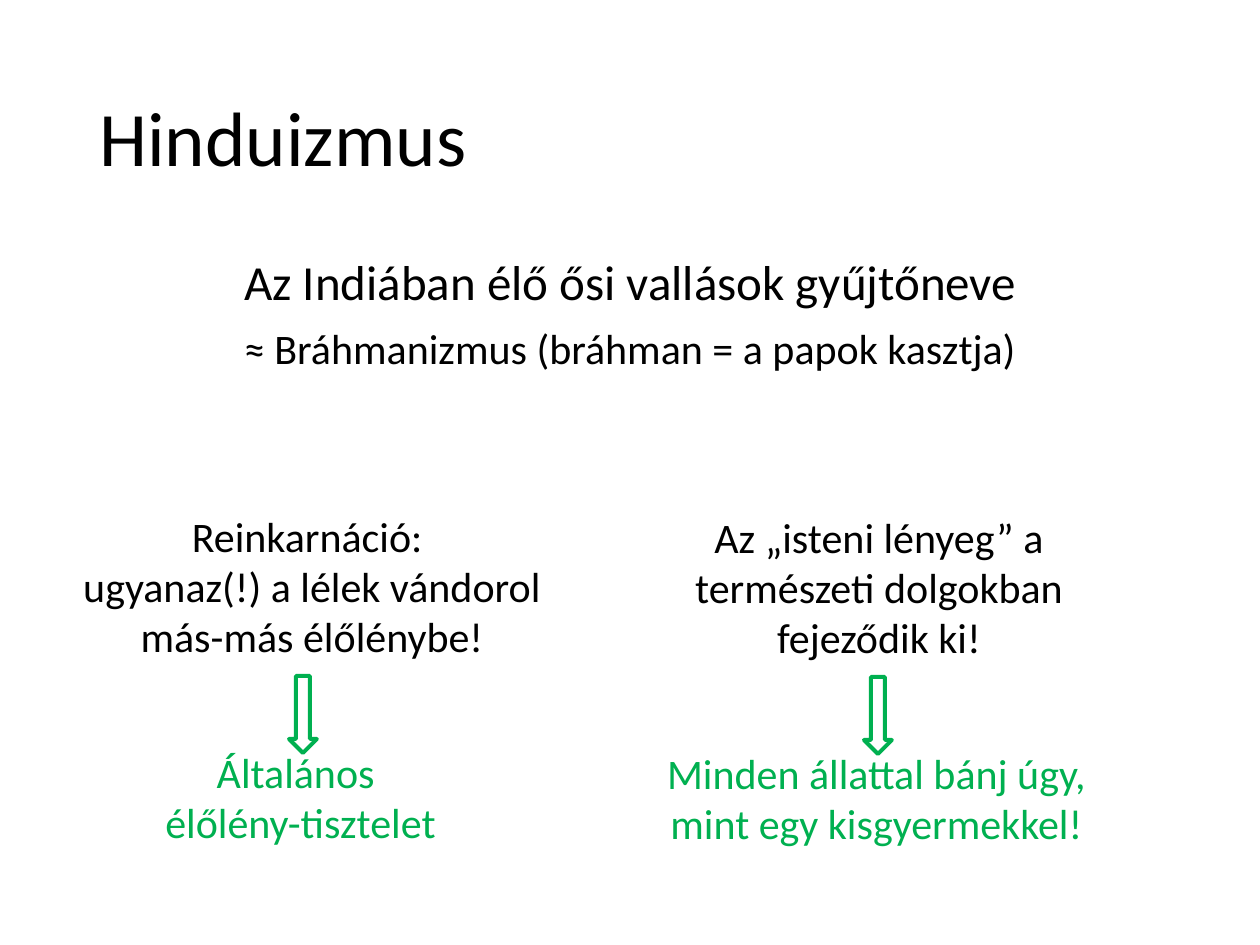
from dataclasses import dataclass

from pptx import Presentation
from pptx.dml.color import RGBColor
from pptx.enum.shapes import MSO_SHAPE
from pptx.enum.text import MSO_ANCHOR, PP_ALIGN
from pptx.util import Emu, Pt

PX_PER_INCH = 126


@dataclass(frozen=True)
class Theme:
    font: str = "Calibri"
    ink: RGBColor = RGBColor(0x00, 0x00, 0x00)
    accent: RGBColor = RGBColor(0x00, 0xB0, 0x50)
    title: int = 44
    lead: int = 28
    body: int = 24
    arrow_line: float = 2.25


THEME = Theme()


def px(length):
    return Emu(round(length * 914400 / PX_PER_INCH))


def add_text(page, box, lines, color=THEME.ink, align=PP_ALIGN.CENTER,
             anchor=MSO_ANCHOR.TOP, spacing=1.0, before=0):
    """Place (text, size) lines, one paragraph each, in a box given in px."""
    frame = page.shapes.add_textbox(*map(px, box)).text_frame
    frame.word_wrap = True
    frame.vertical_anchor = anchor
    for index, (text, size) in enumerate(lines):
        para = frame.paragraphs[0] if index == 0 else frame.add_paragraph()
        para.text = text
        para.alignment = align
        para.line_spacing = spacing
        para.space_before = Pt(before)
        para.font.name = THEME.font
        para.font.size = Pt(size)
        para.font.color.rgb = color


def add_heading(page, box):
    left, top, width, height = box
    # Title
    add_text(page, (left, top, width, 183), [("Hinduizmus", THEME.title)],
             align=PP_ALIGN.LEFT, anchor=MSO_ANCHOR.MIDDLE, spacing=0.9)
    # Definition
    add_text(page, (left, top + 202, width, height - 202),
             [("Az Indiában élő ősi vallások gyűjtőneve", THEME.lead),
              ("≈ Bráhmanizmus (bráhman = a papok kasztja)", THEME.body)],
             spacing=0.9, before=10)


def add_teaching(page, box, belief, rule, arrow_left, rule_left, rule_width):
    """A belief, a down arrow and the rule that follows from it."""
    left, top, width, height = box
    # Belief
    add_text(page, (left, top, width, 165),
             [(line, THEME.body) for line in belief])
    # Arrow
    arrow = page.shapes.add_shape(
        MSO_SHAPE.DOWN_ARROW,
        *map(px, (left + arrow_left, top + 172, 28, 77)))
    arrow.shadow.inherit = False
    arrow.fill.background()
    arrow.line.color.rgb = THEME.accent
    arrow.line.width = Pt(THEME.arrow_line)
    # Rule
    add_text(page, (left + rule_left, top + 236, rule_width, height - 236),
             [(line, THEME.body) for line in rule], THEME.accent)


def main():
    deck = Presentation()
    deck.slide_width, deck.slide_height = px(1260), px(945)
    page = deck.slides.add_slide(deck.slide_layouts[6])

    add_heading(page, (87, 50, 1086, 400))
    add_teaching(page, (64, 504, 496, 352),
                 ["Reinkarnáció: ",
                  "ugyanaz(!) a lélek vándorol más-más élőlénybe!"],
                 ["Általános ", "élőlény-tisztelet"],
                 arrow_left=225, rule_left=83, rule_width=307)
    add_teaching(page, (631, 505, 496, 352),
                 ["Az „isteni lényeg” a természeti dolgokban fejeződik ki!"],
                 ["Minden állattal bánj úgy, mint egy kisgyermekkel!"],
                 arrow_left=233, rule_left=20, rule_width=451)

    deck.save("out.pptx")


if __name__ == "__main__":
    main()
